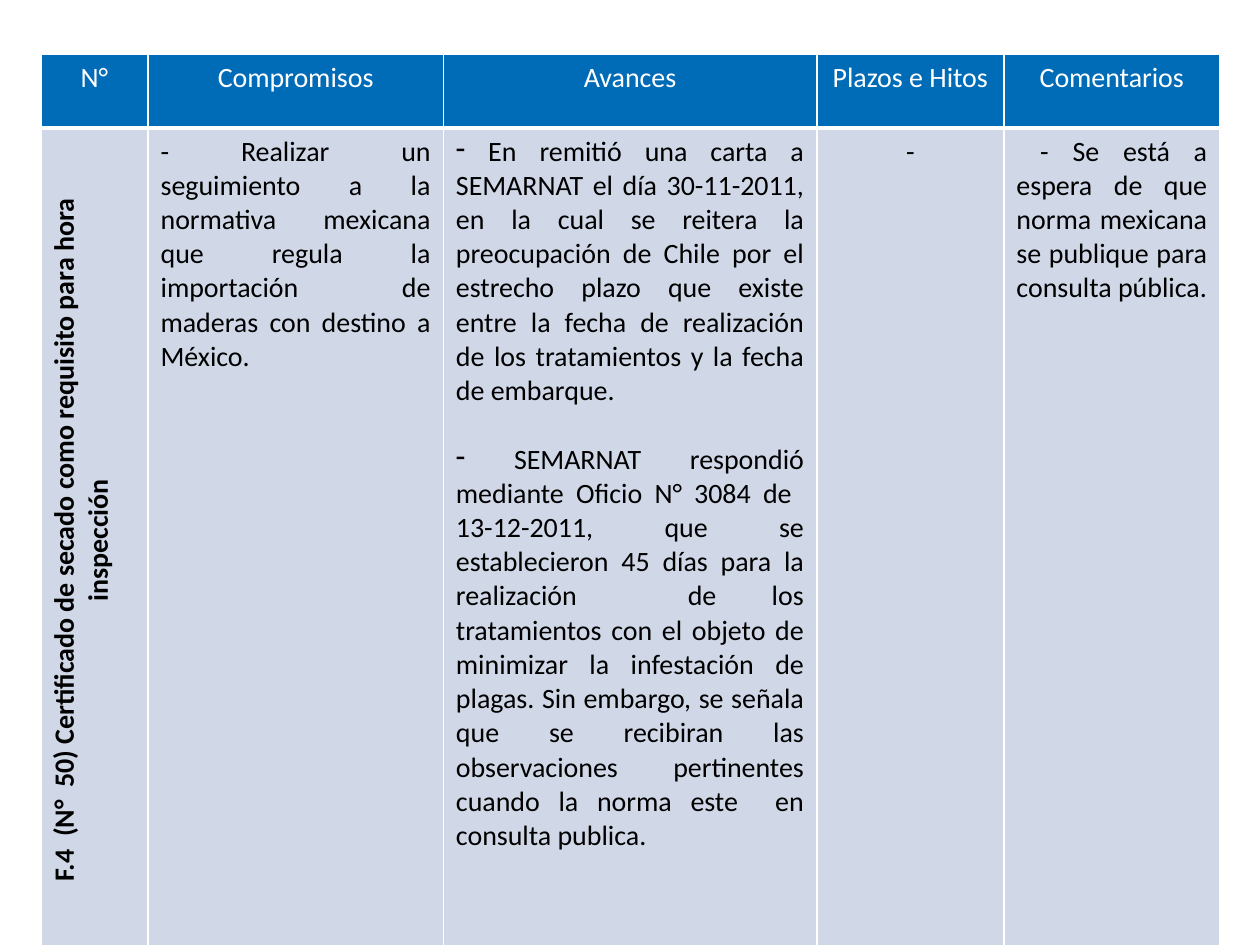
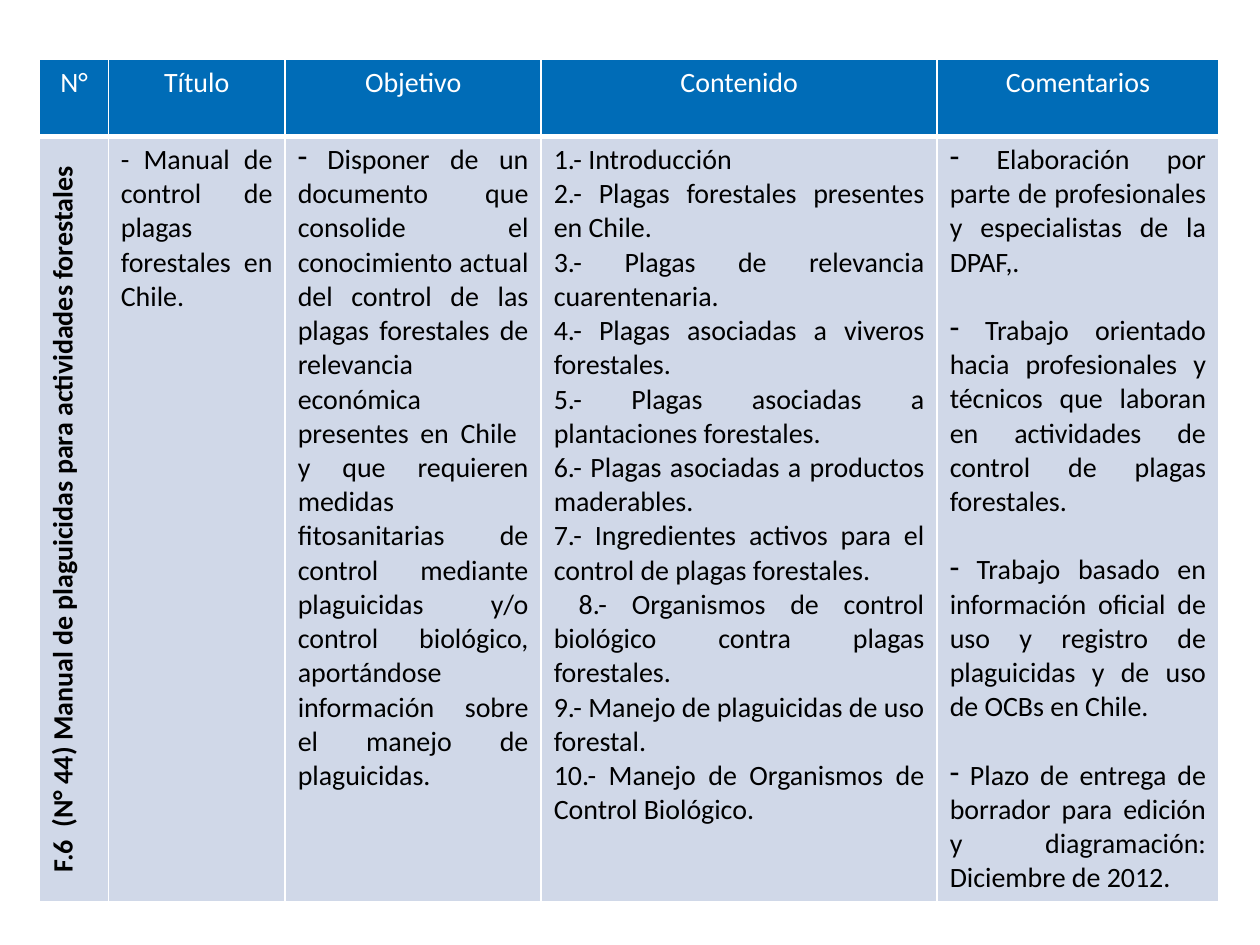
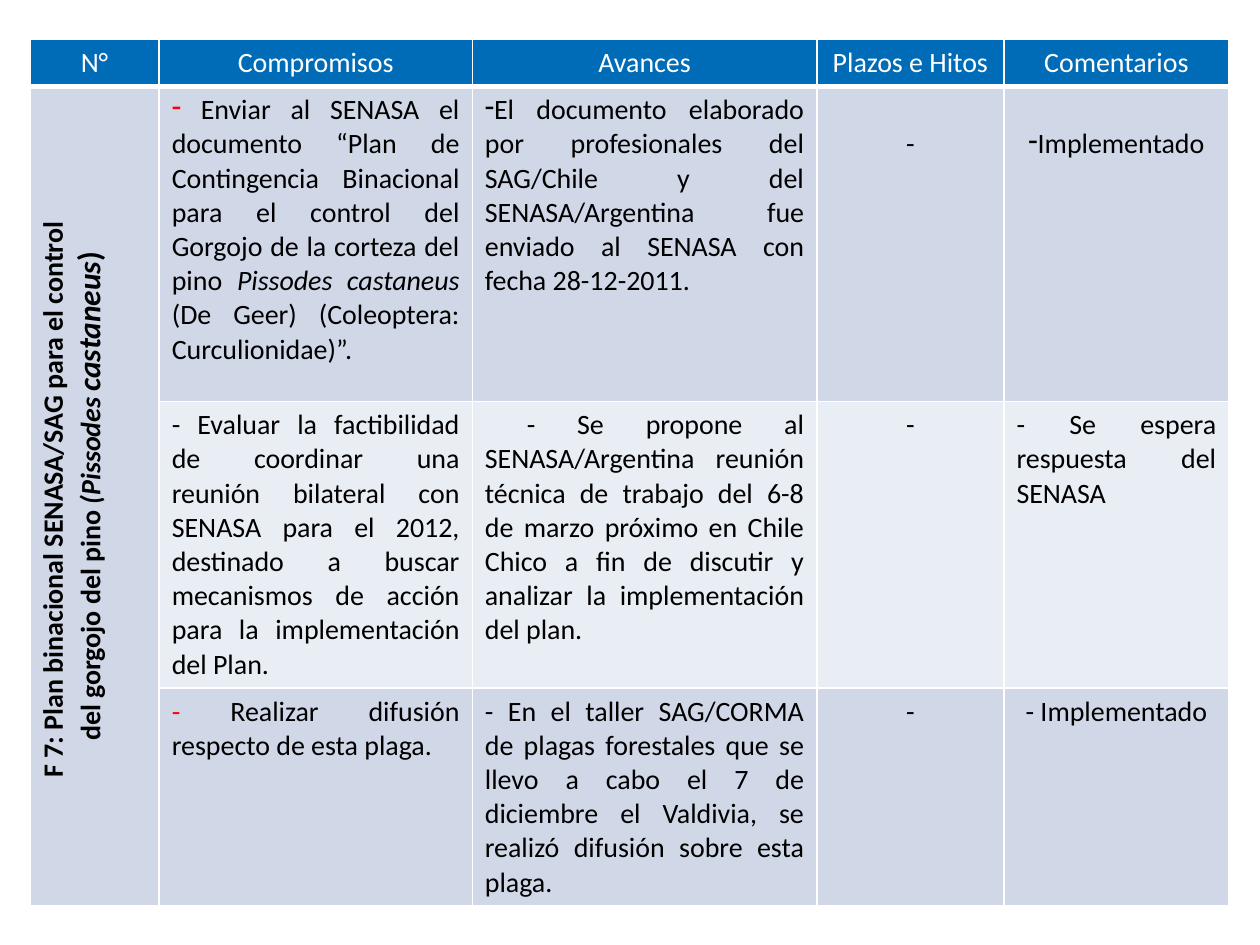
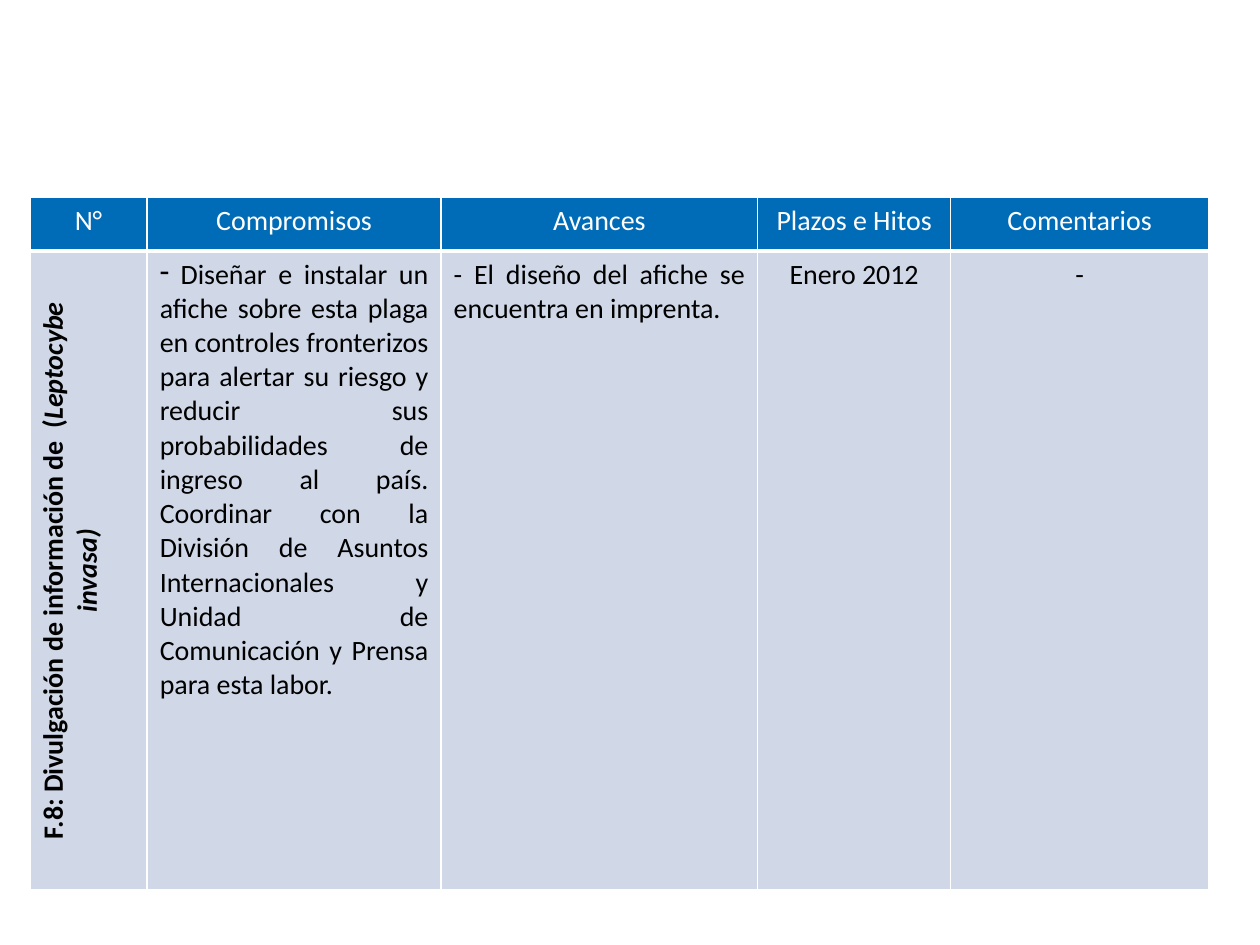
from dataclasses import dataclass

from lxml.etree import SubElement as Sub
from pptx import Presentation
from pptx.dml.color import RGBColor as Rgb
from pptx.enum.text import PP_ALIGN as Align
from pptx.oxml.ns import qn
from pptx.util import Pt

COLORS = {
    "head": "006CB7",
    "odd": "D0D8E8",
    "even": "E9EDF4",
    "line": "FFFFFF",
    "light": "FFFFFF",
    "dark": "000000",
    "red": "FF0000",
}
FONT = "Calibri"
SIZE = 16
GAP = 19.5  # height of one line of text
PAD = 3.6  # top margin of a cell


@dataclass
class Run:
    text: str
    slant: bool = False
    color: str = ""
    size: float = 0


@dataclass
class Para:
    runs: list
    dash: str = ""  # colour of a dash bullet, if any
    gap: float = 0


@dataclass
class Cell:
    paras: list
    align: Align = Align.JUSTIFY
    top: float = PAD
    vert: bool = False


def plain(*texts):
    return Cell([Para([Run(t)]) for t in texts])


def mid(text):
    return Cell([Para([Run(text)])], Align.CENTER)


def dashed(*texts):
    """Justified items with dash bullets, one line apart."""
    return Cell([Para([Run(t)], "dark", GAP if i else 0)
                 for i, t in enumerate(texts)])


def label(*lines):
    """Bold text that reads upwards; each line is a list of runs."""
    return Cell([Para(line) for line in lines], Align.CENTER, vert=True)


def set_font(font, color, bold):
    font.name = FONT
    font.size = Pt(SIZE)
    font.bold = bold
    font.color.rgb = Rgb.from_string(COLORS[color])


def add_dash(para, color):
    props = para._p.get_or_add_pPr()
    props.set("marL", "0")
    props.set("indent", "0")
    tone = Sub(props, qn("a:buClr"))
    Sub(tone, qn("a:srgbClr"), val=COLORS[color])
    Sub(props, qn("a:buFontTx"))
    Sub(props, qn("a:buChar"), char="-")


def add_lines(cell, base):
    """Draw the four borders of a cell, the lower one of width base."""
    props = cell._tc.get_or_add_tcPr()
    for side, width in (("L", 1), ("R", 1), ("T", 1), ("B", base)):
        line = Sub(props, qn(f"a:ln{side}"), w=str(Pt(width)))
        fill = Sub(line, qn("a:solidFill"))
        Sub(fill, qn("a:srgbClr"), val=COLORS["line"])


def fill_cell(cell, data, back, color="dark", base=1):
    add_lines(cell, base)
    cell.fill.solid()
    cell.fill.fore_color.rgb = Rgb.from_string(COLORS[back])
    cell.margin_top = Pt(data.top)
    if data.vert:
        cell._tc.get_or_add_tcPr().set("vert", "vert270")
    frame = cell.text_frame
    for i, item in enumerate(data.paras):
        para = frame.add_paragraph() if i else frame.paragraphs[0]
        para.alignment = data.align
        if item.gap:
            para.space_before = Pt(item.gap)
        if item.dash:
            add_dash(para, item.dash)
        set_font(para.font, color, data.vert)
        for part in item.runs:
            run = para.add_run()
            run.text = part.text
            if part.slant:
                run.font.italic = True
            if part.size:
                run.font.size = Pt(part.size)
            if part.color:
                run.font.color.rgb = Rgb.from_string(COLORS[part.color])


def add_grid(deck, left, top, cols, rows, heads, title, body):
    """Slide with one table: header row, upright title, rows of cells."""
    slide = deck.slides.add_slide(deck.slide_layouts[6])
    table = slide.shapes.add_table(
        len(rows), len(cols), Pt(left), Pt(top),
        Pt(sum(cols)), Pt(sum(rows))).table
    table.first_row = table.horz_banding = False
    for col, width in zip(table.columns, cols):
        col.width = Pt(width)
    for row, height in zip(table.rows, rows):
        row.height = Pt(height)
    for c, text in enumerate(heads):
        fill_cell(table.cell(0, c), mid(text), "head", "light", 3)
    if len(body) > 1:
        table.cell(1, 0).merge(table.cell(len(body), 0))
    fill_cell(table.cell(1, 0), title, "odd")
    for r, line in enumerate(body, 1):
        for c, data in enumerate(line, 1):
            fill_cell(table.cell(r, c), data, "odd" if r % 2 else "even")


TASKS = ["N°", "Compromisos", "Avances", "Plazos e Hitos", "Comentarios"]
MANUAL = ["N°", "Título", "Objetivo", "Contenido", "Comentarios"]


def add_drying(deck):
    title = label([Run("F.4  (N°  50) Certificado de secado como requisito "
                       "para hora inspección")])
    body = [[
        plain("- Realizar un seguimiento a la normativa mexicana que regula "
              "la importación de maderas con destino a México."),
        dashed(
            " En remitió una carta a SEMARNAT el día 30-11-2011, en la cual "
            "se reitera la preocupación de Chile por el estrecho plazo que "
            "existe entre la fecha de realización de los tratamientos y la "
            "fecha de embarque.",
            " SEMARNAT respondió mediante Oficio N° 3084 de  13-12-2011, que "
            "se establecieron 45 días para la realización  de los "
            "tratamientos con el objeto de minimizar la infestación de "
            "plagas. Sin embargo, se señala que se recibiran las "
            "observaciones pertinentes cuando la norma este  en consulta "
            "publica."),
        mid("-"),
        plain(" - Se está a espera de que norma mexicana se publique para "
              "consulta pública."),
    ]]
    add_grid(deck, 23.3, 31.2, [61.3, 168.8, 213.4, 106.9, 123.4],
             [42, 466.5], TASKS, title, body)


def add_manual(deck):
    title = label([Run("F.6  (N° 44) Manual de plaguicidas para actividades "
                       "forestales")])
    body = [[
        plain("- Manual de control de plagas forestales en Chile."),
        dashed(
            " Disponer de un documento que consolide el conocimiento actual "
            "del control de las plagas forestales de relevancia económica "
            "presentes en Chile  y que requieren medidas fitosanitarias de "
            "control mediante plaguicidas y/o control biológico, "
            "aportándose información sobre el manejo de plaguicidas."),
        plain(
            "1.- Introducción",
            "2.- Plagas forestales presentes en Chile.",
            "3.- Plagas de relevancia cuarentenaria.",
            "4.- Plagas asociadas a viveros forestales.",
            "5.- Plagas asociadas a plantaciones forestales.",
            "6.- Plagas asociadas a productos maderables. ",
            "7.- Ingredientes activos para el control de plagas forestales.",
            " 8.- Organismos de control biológico contra plagas forestales. ",
            "9.- Manejo de plaguicidas de uso forestal.",
            "10.- Manejo de Organismos de Control Biológico."),
        dashed(
            " Elaboración por parte de profesionales y especialistas de la "
            "DPAF,.",
            " Trabajo orientado hacia profesionales y técnicos que laboran "
            "en actividades de control de plagas forestales.",
            " Trabajo basado en información oficial de uso y registro de "
            "plaguicidas y de uso de OCBs en Chile.",
            " Plazo de entrega de borrador para edición y diagramación: "
            "Diciembre de 2012."),
    ]]
    add_grid(deck, 22.7, 34, [39.2, 101.1, 146.3, 226.3, 160.9],
             [44, 437], MANUAL, title, body)


def add_weevil(deck):
    title = label(
        [Run("F 7: Plan binacional SENASA/SAG para el control ")],
        [Run("del gorgojo del pino "), Run("(Pissodes ", True),
         Run("castaneus", True, size=18), Run(")", size=18)])
    send = Cell([Para([
        Run(" ", color="red"),
        Run("Enviar al SENASA el documento “Plan de Contingencia Binacional "
            "para el control del Gorgojo de la corteza del pino "),
        Run("Pissodes castaneus", True),
        Run(" (De Geer) (Coleoptera: Curculionidae)”."),
    ], "red")])
    spread = Cell([Para([Run("- ", color="red"),
                         Run("Realizar difusión respecto de esta plaga.")])])
    low = PAD + GAP
    body = [
        [send,
         dashed("El documento elaborado por profesionales del SAG/Chile y "
                "del SENASA/Argentina fue enviado al SENASA con fecha "
                "28-12-2011."),
         Cell([Para([Run("-")])], Align.CENTER, low),
         Cell([Para([Run("Implementado")], "dark")], Align.CENTER, low)],
        [plain("- Evaluar la factibilidad de coordinar una reunión bilateral "
               "con SENASA para el 2012, destinado a buscar mecanismos de "
               "acción para la implementación del Plan."),
         plain(" - Se propone al SENASA/Argentina reunión técnica de trabajo "
               "del 6-8 de marzo próximo en Chile Chico a fin de discutir y "
               "analizar la implementación del plan."),
         mid("-"),
         plain("- Se espera respuesta del SENASA")],
        [spread,
         plain("- En el taller SAG/CORMA de plagas forestales que se llevo a "
               "cabo el 7 de diciembre el Valdivia, se realizó difusión "
               "sobre esta plaga."),
         mid("-"),
         mid("- Implementado")],
    ]
    add_grid(deck, 17, 22.7, [74, 178.9, 196.9, 106.9, 128.6],
             [26.5, 180, 163.5, 124.5], TASKS, title, body)


def add_poster(deck):
    title = label([Run("F.8: Divulgación de información de  ("),
                   Run("Leptocybe invasa)", True)])
    body = [[
        dashed(" Diseñar e instalar un afiche sobre esta plaga en controles "
               "fronterizos para alertar su riesgo y reducir sus "
               "probabilidades de ingreso al país. Coordinar con la División "
               "de Asuntos Internacionales y Unidad de Comunicación y Prensa "
               "para esta labor."),
        plain("- El diseño del afiche se encuentra en imprenta."),
        mid("Enero 2012"),
        mid("-"),
    ]]
    add_grid(deck, 17, 113, [67.1, 168, 180.9, 110.3, 147.4],
             [30.5, 365], TASKS, title, body)


def main():
    deck = Presentation()
    deck.slide_width, deck.slide_height = Pt(720), Pt(540)
    for build in (add_drying, add_manual, add_weevil, add_poster):
        build(deck)
    deck.save("out.pptx")


if __name__ == "__main__":
    main()
